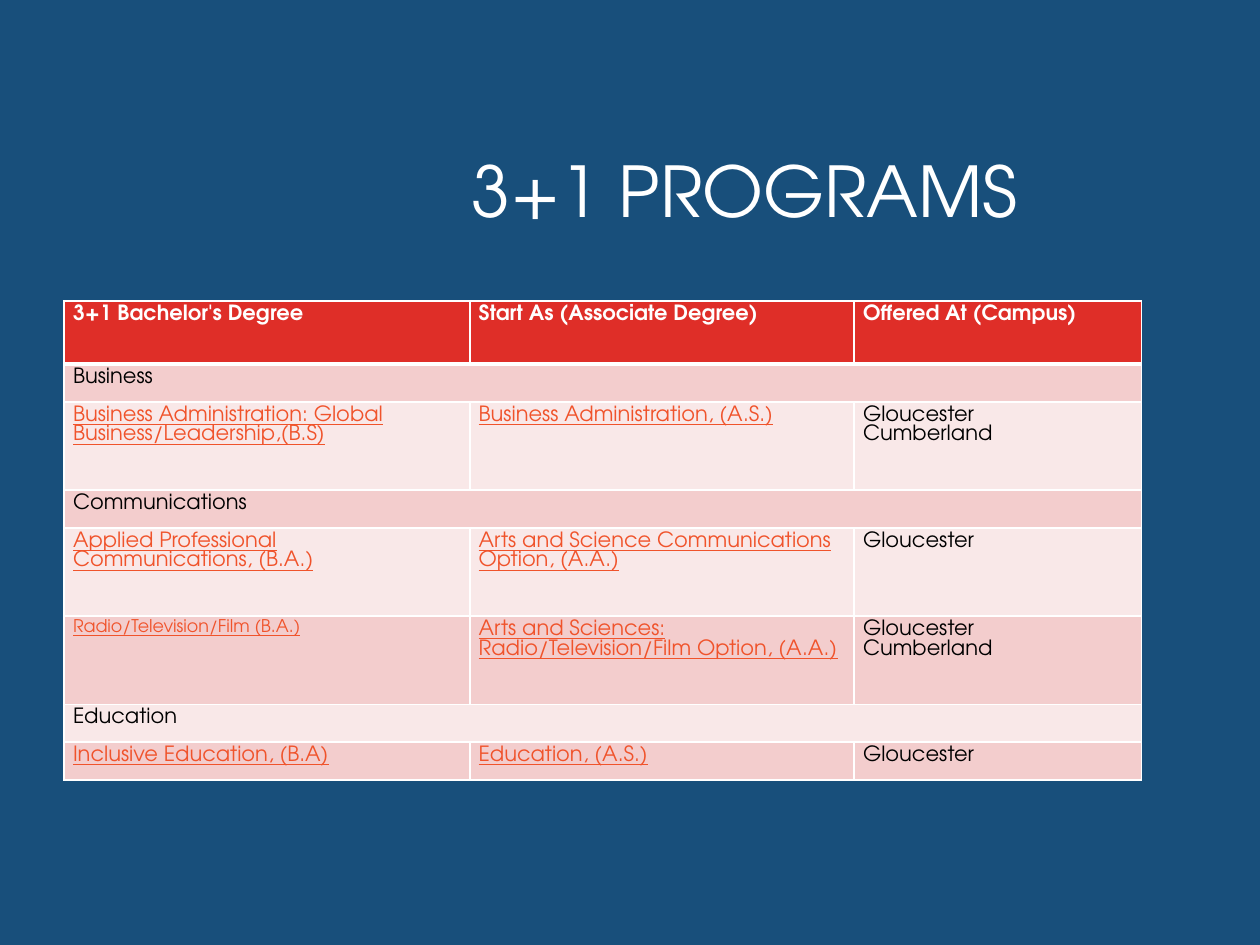
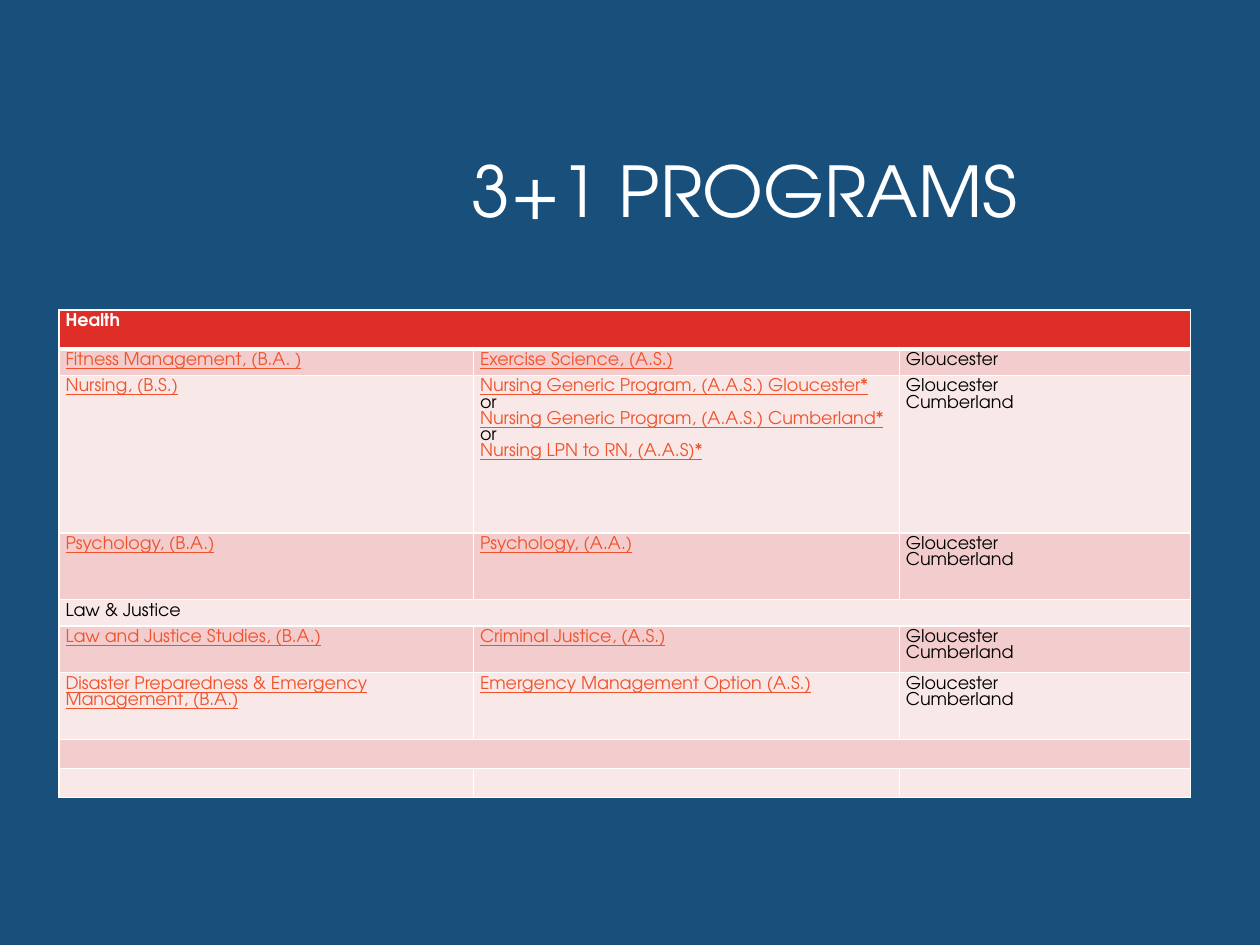
from dataclasses import dataclass

import lxml.etree
import pptx
import pptx.dml.color
import pptx.enum.text
import pptx.oxml.ns
import pptx.table
import pptx.util

# Shared look: a grid of 100 columns by 75 rows covers the slide
SLIDE_WIDTH, SLIDE_HEIGHT = pptx.util.Inches(10), pptx.util.Inches(7.5)
GRID_COLUMNS, GRID_ROWS = 100, 75
FONT = "TeX Gyre Adventor"
NAVY, WHITE, BLACK = "184F7B", "FFFFFF", "000000"
RED, LINK_ORANGE = "DF2E28", "F0532B"
BANDS = ("F9E8E8", "F3CDCD")
TITLE = "3+1 PROGRAMS"
TITLE_SIZE = 40
GLOUCESTER = ("Gloucester",)
BOTH_CAMPUSES = ("Gloucester", "Cumberland")


@dataclass(frozen=True)
class Section:
    """A subject heading across the whole table."""
    name: str


@dataclass(frozen=True)
class Headings:
    """One heading for each column."""
    names: tuple[str, ...]


@dataclass(frozen=True)
class Program:
    """A degree, the associate degrees that lead to it, and its campuses."""
    degree: str = ""
    starts: tuple[str, ...] = ()
    campuses: tuple[str, ...] = ()
    degree_size: float | None = None


@dataclass(frozen=True)
class ProgramTable:
    left: float
    top: float
    columns: tuple[float, ...]
    side_inset: float
    text_size: float
    rows: tuple[tuple[float, Section | Headings | Program], ...]


@dataclass(frozen=True)
class Line:
    """One line of a cell."""
    text: str
    size: float
    color: str
    bold: bool = False
    underline: bool = False


PROGRAM_TABLES = (
    ProgramTable(5.1, 23.9, (32.2, 30.5, 22.8), 0.7, 12, (
        (5, Headings(("3+1 Bachelor's Degree", "Start As (Associate Degree)",
                      "Offered At (Campus)"))),
        (3, Section("Business")),
        (7, Program("Business Administration: Global Business/Leadership,(B.S)",
                    ("Business Administration, (A.S.)",), BOTH_CAMPUSES)),
        (3, Section("Communications")),
        (7, Program("Applied Professional Communications, (B.A.)",
                    ("Arts and Science Communications Option, (A.A.)",),
                    GLOUCESTER)),
        (7, Program("Radio/Television/Film (B.A.)",
                    ("Arts and Sciences: Radio/Television/Film Option, (A.A.)",),
                    BOTH_CAMPUSES, degree_size=10)),
        (3, Section("Education")),
        (3, Program("Inclusive Education, (B.A)", ("Education, (A.S.)",),
                    GLOUCESTER)),
    )),
    ProgramTable(4.7, 24.6, (32.9, 33.8, 23.1), 0.5, 10, (
        (3.1, Section("Health")),
        (2.1, Program("Fitness Management, (B.A. )",
                      ("Exercise Science, (A.S.)",), GLOUCESTER)),
        (12.5, Program("Nursing, (B.S.)",
                       ("Nursing Generic Program, (A.A.S.) Gloucester*",
                        "Nursing Generic Program, (A.A.S.) Cumberland*",
                        "Nursing LPN to RN, (A.A.S)*"), BOTH_CAMPUSES)),
        (5.3, Program("Psychology, (B.A.)", ("Psychology, (A.A.)",),
                      BOTH_CAMPUSES)),
        (2.1, Section("Law & Justice")),
        (3.7, Program("Law and Justice Studies, (B.A.)",
                      ("Criminal Justice, (A.S.)",), BOTH_CAMPUSES)),
        (5.3, Program("Disaster Preparedness & Emergency Management, (B.A.)",
                      ("Emergency Management Option (A.S.)",), BOTH_CAMPUSES)),
        (2.3, Section("")),
        (2.3, Program()),
    )),
)


def across(columns: float) -> int:
    return round(SLIDE_WIDTH * columns / GRID_COLUMNS)


def down(rows: float) -> int:
    return round(SLIDE_HEIGHT * rows / GRID_ROWS)


def color(value: str) -> pptx.dml.color.RGBColor:
    return pptx.dml.color.RGBColor.from_string(value)


def fill_solid(fill, value: str) -> None:
    fill.solid()
    fill.fore_color.rgb = color(value)


def add_run(paragraph, line: Line) -> None:
    run = paragraph.add_run()
    run.text = line.text
    font = run.font
    font.name, font.size = FONT, pptx.util.Pt(line.size)
    font.bold, font.underline = line.bold, line.underline
    font.color.rgb = color(line.color)


def add_element(parent, tag: str, **attributes: str):
    return lxml.etree.SubElement(parent, pptx.oxml.ns.qn(tag), attributes)


def set_borders(cell, top_points: int, bottom_points: int) -> None:
    properties = cell._tc.get_or_add_tcPr()
    for side, points in (("L", 1), ("R", 1), ("T", top_points), ("B", bottom_points)):
        border = add_element(properties, f"a:ln{side}", w=str(pptx.util.Pt(points)))
        add_element(add_element(border, "a:solidFill"), "a:srgbClr", val=WHITE)


def cell_lines(entry: Section | Headings | Program, size: float,
               is_header: bool) -> list[list[Line]]:
    """The lines of each cell in a row, from left to right."""
    if not isinstance(entry, Program):
        names = entry.names if isinstance(entry, Headings) else (entry.name,)
        text_color = WHITE if is_header else BLACK
        return [[Line(name, size, text_color, bold=is_header)] if name else []
                for name in names]
    degree = ([Line(entry.degree, entry.degree_size or size, LINK_ORANGE,
                    underline=True)] if entry.degree else [])
    starts: list[Line] = []
    for start in entry.starts:
        if starts:
            starts.append(Line("or", size, BLACK))
        starts.append(Line(start, size, LINK_ORANGE, underline=True))
    return [degree, starts, [Line(campus, size, BLACK) for campus in entry.campuses]]


def write_cell(cell, lines: list[Line], size: float) -> None:
    paragraph = cell.text_frame.paragraphs[0]
    for number, line in enumerate(lines):
        if number:
            paragraph.add_line_break()
        add_run(paragraph, line)
    if not lines:  # keeps an empty row from growing
        ending = add_element(paragraph._p, "a:endParaRPr", sz=str(round(size * 100)))
        add_element(ending, "a:latin", typeface=FONT)


def add_title(slide) -> None:
    title = slide.shapes.title
    title.left, title.top = across(23.8), down(8.4)
    title.width, title.height = across(70.6), down(14.1)
    frame = title.text_frame
    frame.word_wrap = True
    frame.auto_size = pptx.enum.text.MSO_AUTO_SIZE.NONE
    frame.vertical_anchor = pptx.enum.text.MSO_ANCHOR.MIDDLE
    paragraph = frame.paragraphs[0]
    paragraph.alignment = pptx.enum.text.PP_ALIGN.CENTER
    paragraph.line_spacing = 0.9
    add_run(paragraph, Line(TITLE, TITLE_SIZE, WHITE))


def add_program_table(slide, programs: ProgramTable) -> None:
    table: pptx.table.Table = slide.shapes.add_table(
        len(programs.rows), len(programs.columns),
        across(programs.left), down(programs.top),
        across(sum(programs.columns)),
        down(sum(height for height, _ in programs.rows))).table
    for column, width in zip(table.columns, programs.columns):
        column.width = across(width)

    for index, (height, entry) in enumerate(programs.rows):
        is_header = index == 0
        table.rows[index].height = down(height)
        cells = list(table.rows[index].cells)
        for cell in cells:
            cell.margin_left = cell.margin_right = across(programs.side_inset)
            cell.margin_top = cell.margin_bottom = down(0.3)
            set_borders(cell, 3 if index == 1 else 1, 3 if is_header else 1)
            fill_solid(cell.fill, RED if is_header else BANDS[index % 2])
        if isinstance(entry, Section):
            cells[0].merge(cells[-1])
        for cell, lines in zip(cells, cell_lines(entry, programs.text_size, is_header)):
            write_cell(cell, lines, programs.text_size)


def main() -> None:
    presentation = pptx.Presentation()
    presentation.slide_width, presentation.slide_height = SLIDE_WIDTH, SLIDE_HEIGHT
    fill_solid(presentation.slide_master.background.fill, NAVY)
    title_only = presentation.slide_layouts.get_by_name("Title Only")
    for programs in PROGRAM_TABLES:
        slide = presentation.slides.add_slide(title_only)
        add_title(slide)
        add_program_table(slide, programs)
    presentation.save("out.pptx")


if __name__ == "__main__":
    main()
